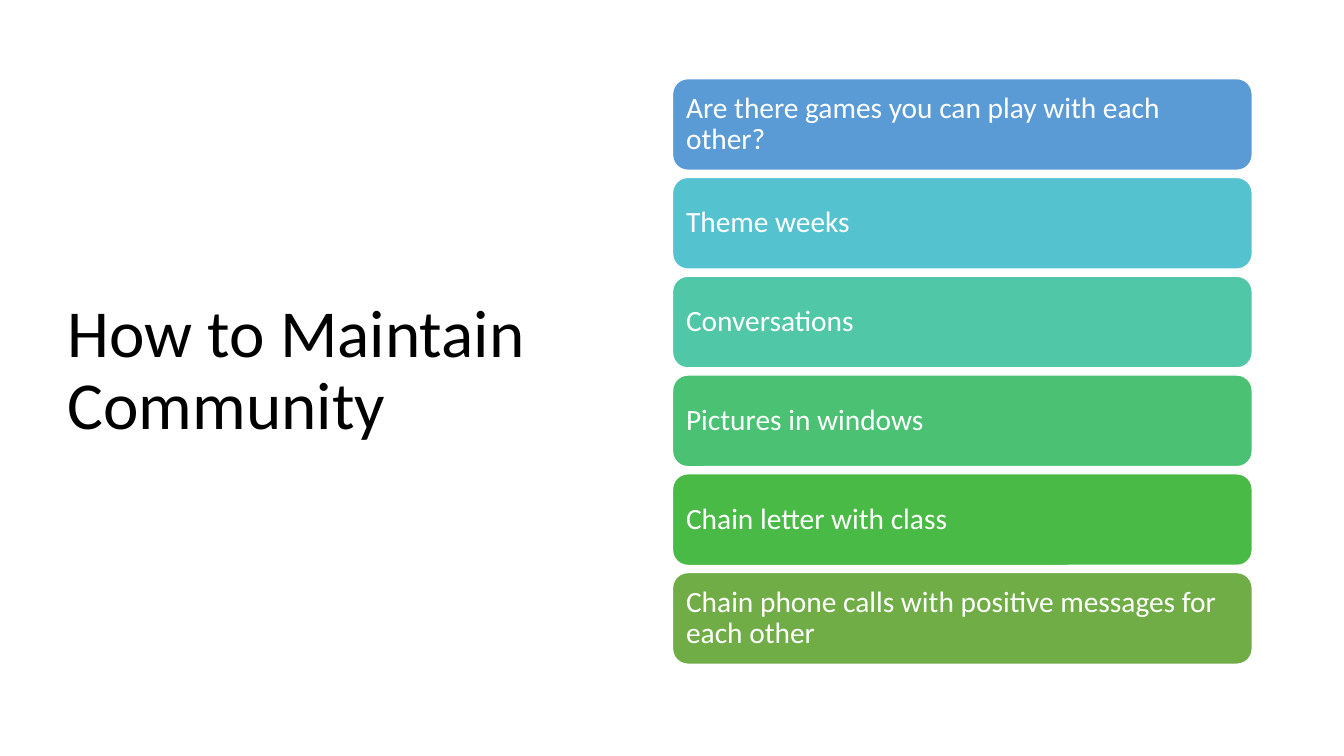
from dataclasses import dataclass

from pptx import Presentation
from pptx.dml.color import RGBColor
from pptx.enum import shapes, text
from pptx.util import Inches, Pt


@dataclass(frozen=True)
class Theme:
    font: str = "Calibri"
    ink: str = "000000"
    paper: str = "FFFFFF"
    head: int = 48
    body: int = 21
    lead: float = 0.9


THEME = Theme()
IDEAS = [
    ("Are there games you can play with each other?", "5B9BD5"),
    ("Theme weeks", "55C3CF"),
    ("Conversations", "50C8A7"),
    ("Pictures in windows", "4BC174"),
    ("Chain letter with class", "4ABA46"),
    ("Chain phone calls with positive messages for each other", "70AD47"),
]
LEFT, TOP, WIDTH, HEIGHT, STEP = 6.67, 0.78, 5.75, 0.91, 0.98


def write(frame, words, size, color):
    frame.text = words
    frame.word_wrap = True
    frame.auto_size = text.MSO_AUTO_SIZE.NONE
    frame.vertical_anchor = text.MSO_ANCHOR.MIDDLE
    para = frame.paragraphs[0]
    para.alignment = text.PP_ALIGN.LEFT
    para.line_spacing = THEME.lead
    para.font.name = THEME.font
    para.font.size = Pt(size)
    para.font.color.rgb = RGBColor.from_string(color)


def add_title(slide, words):
    title = slide.shapes.title
    title.left, title.top = Inches(0.57), Inches(0.68)
    title.width, title.height = Inches(5.67), Inches(6.02)
    write(title.text_frame, words, THEME.head, THEME.ink)


def add_bar(slide, top, words, color):
    bar = slide.shapes.add_shape(
        shapes.MSO_SHAPE.ROUNDED_RECTANGLE,
        Inches(LEFT), Inches(top), Inches(WIDTH), Inches(HEIGHT),
    )
    bar.shadow.inherit = False
    bar.fill.solid()
    bar.fill.fore_color.rgb = RGBColor.from_string(color)
    bar.line.color.rgb = RGBColor.from_string(THEME.paper)
    bar.line.width = Pt(1)
    frame = bar.text_frame
    frame.margin_left = frame.margin_right = Inches(0.09)
    frame.margin_top = frame.margin_bottom = Inches(0.09)
    write(frame, words, THEME.body, THEME.paper)


def main():
    deck = Presentation()
    deck.slide_width, deck.slide_height = Inches(13.33), Inches(7.5)
    slide = deck.slides.add_slide(deck.slide_layouts.get_by_name("Title Only"))
    add_title(slide, "How to Maintain Community")
    for row, (words, color) in enumerate(IDEAS):
        add_bar(slide, TOP + row * STEP, words, color)
    deck.save("out.pptx")


if __name__ == "__main__":
    main()
